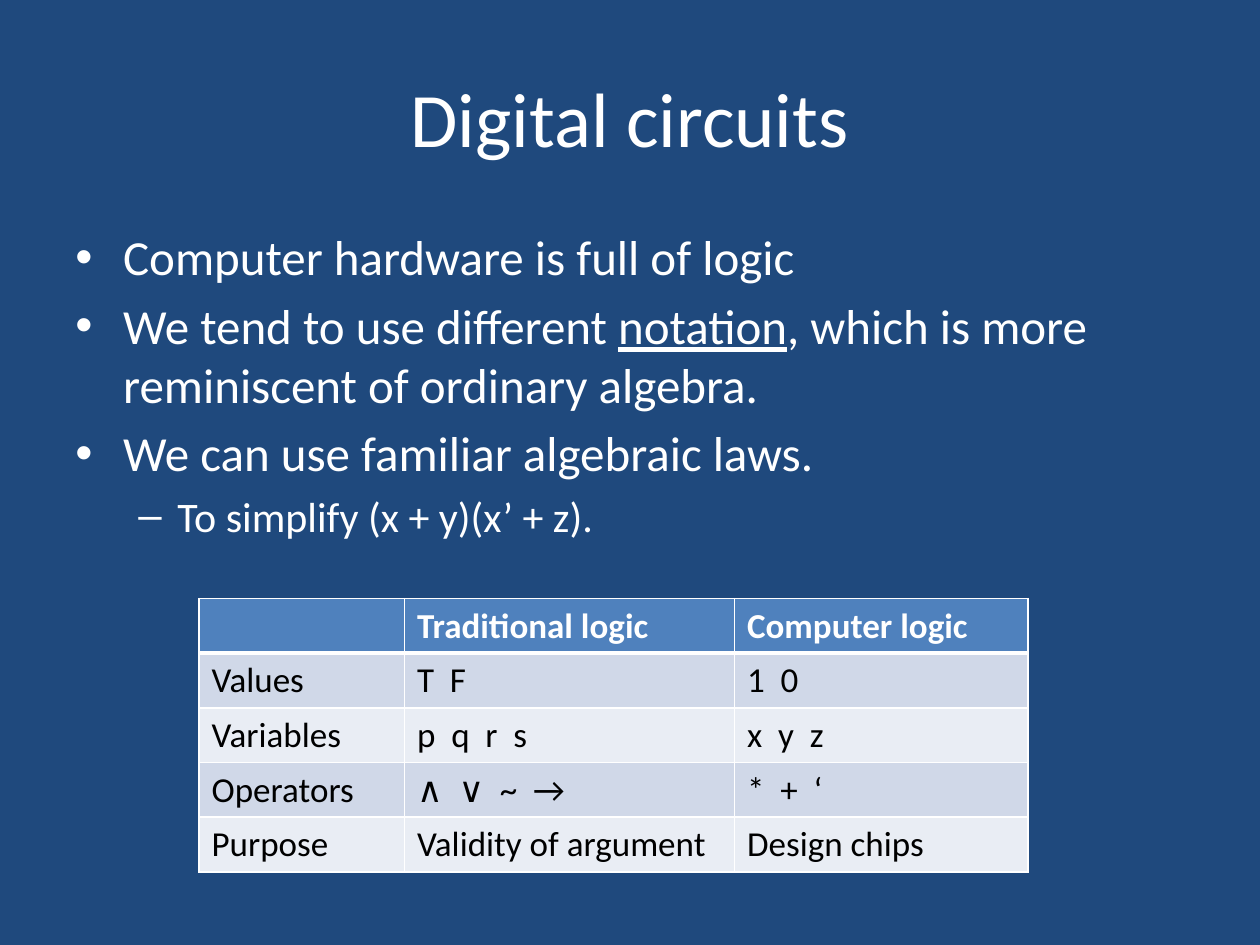
from typing import NamedTuple

from lxml.etree import SubElement
from pptx import Presentation
from pptx.dml.color import RGBColor
from pptx.enum.text import MSO_ANCHOR, PP_ALIGN
from pptx.oxml.ns import qn
from pptx.util import Inches, Pt

COLORS = {
    "background": "1F497D",
    "light": "FFFFFF",
    "dark": "000000",
    "header": "4F81BD",
    "odd_row": "D0D8E8",
    "even_row": "E9EDF4",
}
FONT = "Calibri"


class Level(NamedTuple):
    bullet: str
    margin: float
    hanging: float
    size: int


class Point(NamedTuple):
    level: Level
    before: str
    underlined: str = ""
    after: str = ""


MAIN = Level("•", 0.38, 0.38, 28)
SUB = Level("–", 0.81, 0.31, 24)

POINTS = [
    Point(MAIN, "Computer hardware is full of logic"),
    Point(MAIN, "We tend to use different ", "notation",
          ", which is more reminiscent of ordinary algebra."),
    Point(MAIN, "We can use familiar algebraic laws."),
    Point(SUB, "To simplify (x + y)(x’ + z)."),
]

NOTATION = [
    ("", "Traditional logic", "Computer logic"),
    ("Values", "T  F", "1  0"),
    ("Variables", "p  q  r  s", "x  y  z"),
    ("Operators", "∧  ∨  ~  →", "*  +  ‘"),
    ("Purpose", "Validity of argument", "Design chips"),
]
COLUMN_WIDTHS = (1.63, 2.62, 2.33)
ROW_HEIGHT = 0.43


def rgb(name: str) -> RGBColor:
    return RGBColor.from_string(COLORS[name])


def set_font(paragraph, size: int, color: str, bold: bool = False) -> None:
    font = paragraph.font
    font.name, font.size, font.bold = FONT, Pt(size), bold
    font.color.rgb = rgb(color)


def write_point(paragraph, point: Point) -> None:
    level = point.level
    paragraph.space_before = Pt(level.size * 0.2)
    props = paragraph._p.get_or_add_pPr()
    props.set("marL", str(Inches(level.margin)))
    props.set("indent", str(Inches(-level.hanging)))
    SubElement(props, qn("a:buFont"), typeface="Arial")
    SubElement(props, qn("a:buChar"), char=level.bullet)
    set_font(paragraph, level.size, "light")
    for text in filter(None, point[1:]):
        run = paragraph.add_run()
        run.text = text
        if text == point.underlined:
            run.font.underline = True


def set_borders(cell, top: int, bottom: int) -> None:
    props = cell._tc.get_or_add_tcPr()
    for side, width in (("L", 1), ("R", 1), ("T", top), ("B", bottom)):
        line = SubElement(props, qn(f"a:ln{side}"), w=str(Pt(width)))
        fill = SubElement(line, qn("a:solidFill"))
        SubElement(fill, qn("a:srgbClr"), val=COLORS["light"])


def write_cell(cell, text: str, row: int) -> None:
    is_header = row == 0
    set_borders(cell, top=3 if row == 1 else 1, bottom=3 if is_header else 1)
    cell.fill.solid()
    cell.fill.fore_color.rgb = rgb(
        "header" if is_header else "odd_row" if row % 2 else "even_row")
    cell.text = text
    set_font(cell.text_frame.paragraphs[0], 20,
             "light" if is_header else "dark", bold=is_header)


def main() -> None:
    prs = Presentation()
    prs.slide_width, prs.slide_height = Inches(10), Inches(7.5)
    slide = prs.slides.add_slide(prs.slide_layouts[5])
    slide.background.fill.solid()
    slide.background.fill.fore_color.rgb = rgb("background")

    # Title
    title = slide.shapes.title
    title.left, title.top = Inches(0.5), Inches(0.3)
    title.width, title.height = Inches(9), Inches(1.25)
    title.text_frame.text = "Digital circuits"
    title.text_frame.vertical_anchor = MSO_ANCHOR.MIDDLE
    heading = title.text_frame.paragraphs[0]
    heading.alignment = PP_ALIGN.CENTER
    set_font(heading, 44, "light")

    # Bulleted points
    body = slide.shapes.add_textbox(
        Inches(0.5), Inches(1.75), Inches(9), Inches(4.95)).text_frame
    body.word_wrap = True
    for index, point in enumerate(POINTS):
        write_point(body.add_paragraph() if index else body.paragraphs[0], point)

    # Notation table
    table = slide.shapes.add_table(
        len(NOTATION), len(COLUMN_WIDTHS), Inches(1.58), Inches(4.75),
        Inches(sum(COLUMN_WIDTHS)), Inches(ROW_HEIGHT * len(NOTATION))).table
    for column, width in zip(table.columns, COLUMN_WIDTHS):
        column.width = Inches(width)
    for row, texts in enumerate(NOTATION):
        for col, text in enumerate(texts):
            write_cell(table.cell(row, col), text, row)

    prs.save("out.pptx")


if __name__ == "__main__":
    main()
